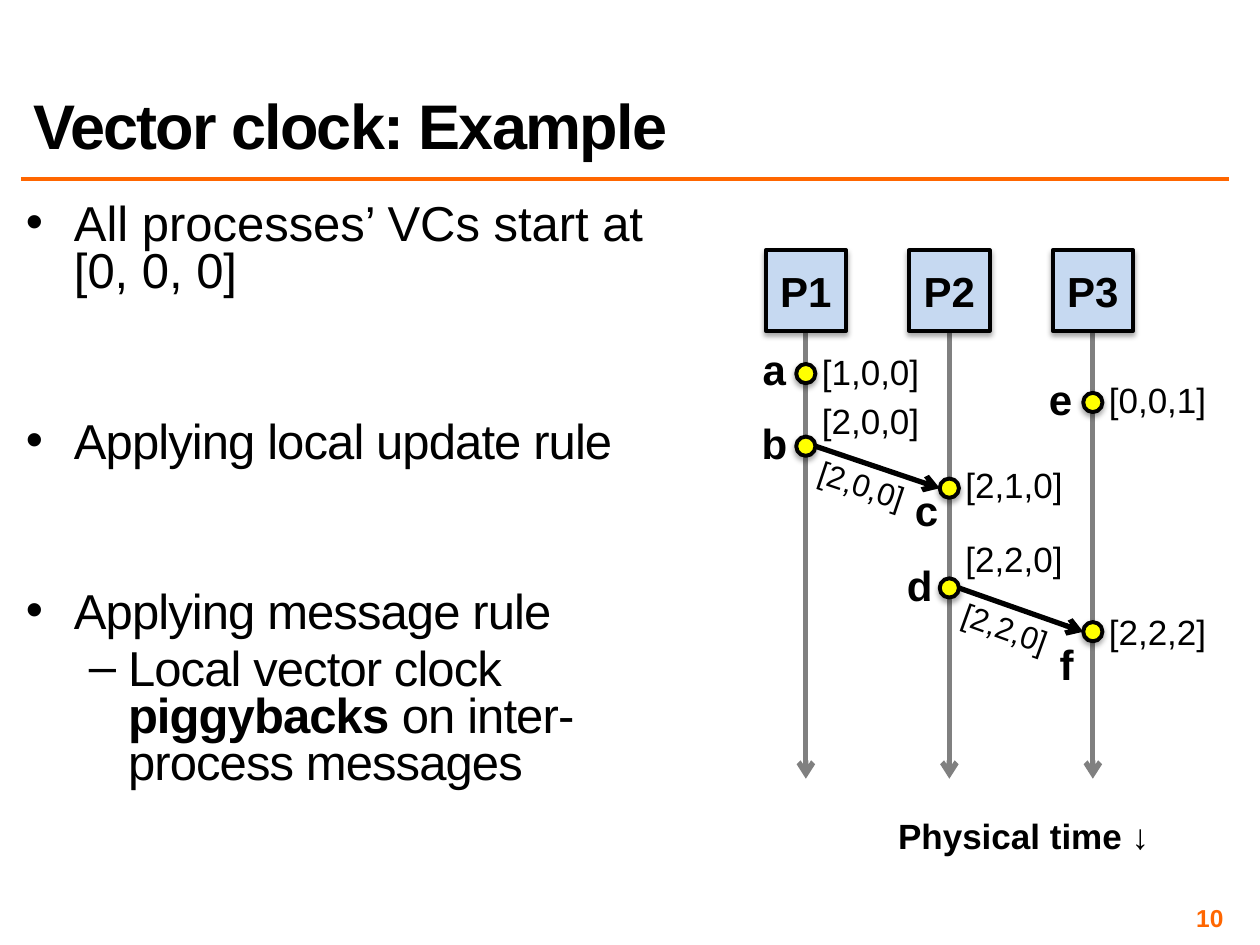
"""Build a slide that walks through a vector clock example."""
from lxml.etree import SubElement
from pptx import Presentation
from pptx.dml.color import RGBColor
from pptx.enum.shapes import MSO_CONNECTOR, MSO_SHAPE
from pptx.enum.text import MSO_ANCHOR, PP_ALIGN
from pptx.oxml.ns import qn
from pptx.util import Pt

COLORS = {
    "ink": "000000",
    "accent": "FF6600",
    "lane": "808080",
    "process": "C6D9F1",
    "event": "FFFF00",
}
LANES = {"P1": 460.5, "P2": 542.5, "P3": 624.5}
BOX_SIZE, BOX_TOP, LANE_END = 46, 143, 445
RADIUS = 5.5
CLOCK_OFFSET = 37

# name: lane, height, letter offset (across, down), clock, clock offset down
EVENTS = {
    "a": ("P1", 213.5, -18, -3, "[1,0,0]", -1),
    "b": ("P1", 255, -18, -2, "[2,0,0]", -15),
    "c": ("P2", 279, -13, 12.5, "[2,1,0]", -2),
    "d": ("P2", 336, -17, -2, "[2,2,0]", -17),
    "e": ("P3", 230, -18.5, -2, "[0,0,1]", -2),
    "f": ("P3", 361, -15, 18.5, "[2,2,2]", 0),
}
MESSAGES = [("b", "c", "[2,0,0]", 18.5), ("d", "f", "[2,2,0]", 19.8)]

# level, space before, letter spacing, spans of (text, bold)
BULLETS = [
    (0, 5.6, 0, [("All processes’ VCs start at [0, 0, 0]", False)]),
    (0, 70.5, -0.5, [("Applying local update rule", False)]),
    (0, 70.5, -0.5, [("Applying message rule", False)]),
    (1, 5.6, -0.5, [("Local vector clock ", False), ("piggybacks", True),
                    (" on inter-process messages", False)]),
]
BULLET_STYLES = [("•", 27.4, 27.4), ("–", 58.3, 22.3)]


def color(name):
    """Return the named colour."""
    return RGBColor.from_string(COLORS[name])


def add_span(para, text, size=24, bold=False, ink="ink", spacing=0):
    """Add a formatted run to a paragraph."""
    span = para.add_run()
    span.text = text
    span.font.name = "Arial"
    span.font.size = Pt(size)
    span.font.bold = bold
    span.font.color.rgb = color(ink)
    if spacing:
        span._r.get_or_add_rPr().set("spc", str(round(spacing * 100)))


def add_text(page, text, left, top, width, height, align=PP_ALIGN.LEFT,
             anchor=MSO_ANCHOR.TOP, inset=7.2, wrap=True, line_spacing=None, **style):
    """Add a text box; an empty text leaves its paragraph free."""
    box = page.shapes.add_textbox(Pt(left), Pt(top), Pt(width), Pt(height))
    frame = box.text_frame
    frame.word_wrap = wrap
    frame.vertical_anchor = anchor
    frame.margin_left = frame.margin_right = Pt(inset)
    frame.margin_top = frame.margin_bottom = Pt(min(inset, 3.6))
    para = frame.paragraphs[0]
    para.alignment = align
    if line_spacing:
        para.line_spacing = line_spacing
    if text:
        add_span(para, text, **style)
    return box


def add_label(page, text, center_x, center_y, width=72, size=20, rotation=0, bold=False):
    """Add a one-line label centred on a point."""
    height = size * 1.2 + 7.2
    box = add_text(page, text, center_x - width / 2, center_y - height / 2, width, height,
                   align=PP_ALIGN.CENTER, anchor=MSO_ANCHOR.MIDDLE, wrap=False,
                   size=size, bold=bold)
    box.rotation = rotation


def add_line(page, start, end, ink, width, arrow=True):
    """Add a straight line, with an arrowhead at its end if asked."""
    line = page.shapes.add_connector(MSO_CONNECTOR.STRAIGHT, *map(Pt, start + end))
    line.line.color.rgb = color(ink)
    line.line.width = Pt(width)
    if arrow:
        SubElement(line.line._get_or_add_ln(), qn("a:tailEnd"), type="arrow")
    SubElement(line._element.spPr, qn("a:effectLst"))


def add_node(page, kind, center_x, center_y, size, fill, text=""):
    """Add an outlined shape with a soft shadow, centred on a point."""
    node = page.shapes.add_shape(kind, Pt(center_x - size / 2), Pt(center_y - size / 2),
                                 Pt(size), Pt(size))
    node.fill.solid()
    node.fill.fore_color.rgb = color(fill)
    node.line.color.rgb = color("ink")
    node.line.width = Pt(2.25)
    node.shadow.inherit = False
    effects = node._element.spPr.find(qn("a:effectLst"))
    shadow = SubElement(effects, qn("a:outerShdw"), blurRad=str(Pt(3.1)), dist=str(Pt(1.8)),
                        dir="5400000", rotWithShape="0")
    shade = SubElement(shadow, qn("a:srgbClr"), val=COLORS["ink"])
    SubElement(shade, qn("a:alpha"), val="35000")
    if text:
        node.text_frame.vertical_anchor = MSO_ANCHOR.MIDDLE
        node.text_frame.word_wrap = False
        para = node.text_frame.paragraphs[0]
        para.alignment = PP_ALIGN.CENTER
        add_span(para, text, bold=True)


def add_bullets(page):
    """Add the bulleted explanation."""
    frame = add_text(page, "", 12, 113.8, 390, 411, inset=2.9).text_frame
    for index, (level, before, spacing, spans) in enumerate(BULLETS):
        para = frame.add_paragraph() if index else frame.paragraphs[0]
        para.level = level
        para.line_spacing = 0.8
        para.space_before = Pt(before)
        mark, margin, hanging = BULLET_STYLES[level]
        properties = para._p.get_or_add_pPr()
        properties.set("marL", str(Pt(margin)))
        properties.set("indent", str(-Pt(hanging)))
        SubElement(properties, qn("a:buFont"), typeface="Arial")
        SubElement(properties, qn("a:buChar"), char=mark)
        for text, bold in spans:
            add_span(para, text, size=28, bold=bold, spacing=spacing)


def add_diagram(page):
    """Add the process lanes, events and messages."""
    for name, x in LANES.items():
        add_line(page, (x, BOX_TOP + BOX_SIZE), (x, LANE_END), "lane", 3)
        add_node(page, MSO_SHAPE.FLOWCHART_PROCESS, x, BOX_TOP + BOX_SIZE / 2, BOX_SIZE,
                 "process", name)
    for name, (lane, y, across, down, clock, clock_down) in EVENTS.items():
        x = LANES[lane]
        add_node(page, MSO_SHAPE.OVAL, x, y, 2 * RADIUS, "event")
        add_label(page, name, x + across, y + down, width=29, size=24, bold=True)
        add_label(page, clock, x + CLOCK_OFFSET, y + clock_down)
    for sender, receiver, clock, angle in MESSAGES:
        (x1, y1), (x2, y2) = [(LANES[EVENTS[name][0]], EVENTS[name][1])
                              for name in (sender, receiver)]
        add_line(page, (x1 + RADIUS, y1), (x2 - RADIUS, y2), "ink", 3)
        add_label(page, clock, (x1 + x2) / 2 - 9, (y1 + y2) / 2 + 10, width=65, size=18,
                  rotation=angle)
    add_label(page, "Physical time ↓", 585, 477.5, width=159, bold=True)


def main():
    """Build and save the slide."""
    deck = Presentation()
    deck.slide_width, deck.slide_height = Pt(720), Pt(540)
    page = deck.slides.add_slide(deck.slide_layouts[6])
    add_line(page, (12, 102.2), (702, 102.2), "accent", 2, arrow=False)
    add_text(page, "Vector clock: Example", 12, 12, 690, 84, anchor=MSO_ANCHOR.BOTTOM,
             line_spacing=0.8, size=36, bold=True, spacing=-1)
    add_bullets(page)
    add_diagram(page)
    add_text(page, "10", 534, 516.2, 168, 16.6, align=PP_ALIGN.RIGHT,
             anchor=MSO_ANCHOR.MIDDLE, inset=2.9, size=14, bold=True, ink="accent")
    deck.save("out.pptx")


if __name__ == "__main__":
    main()
